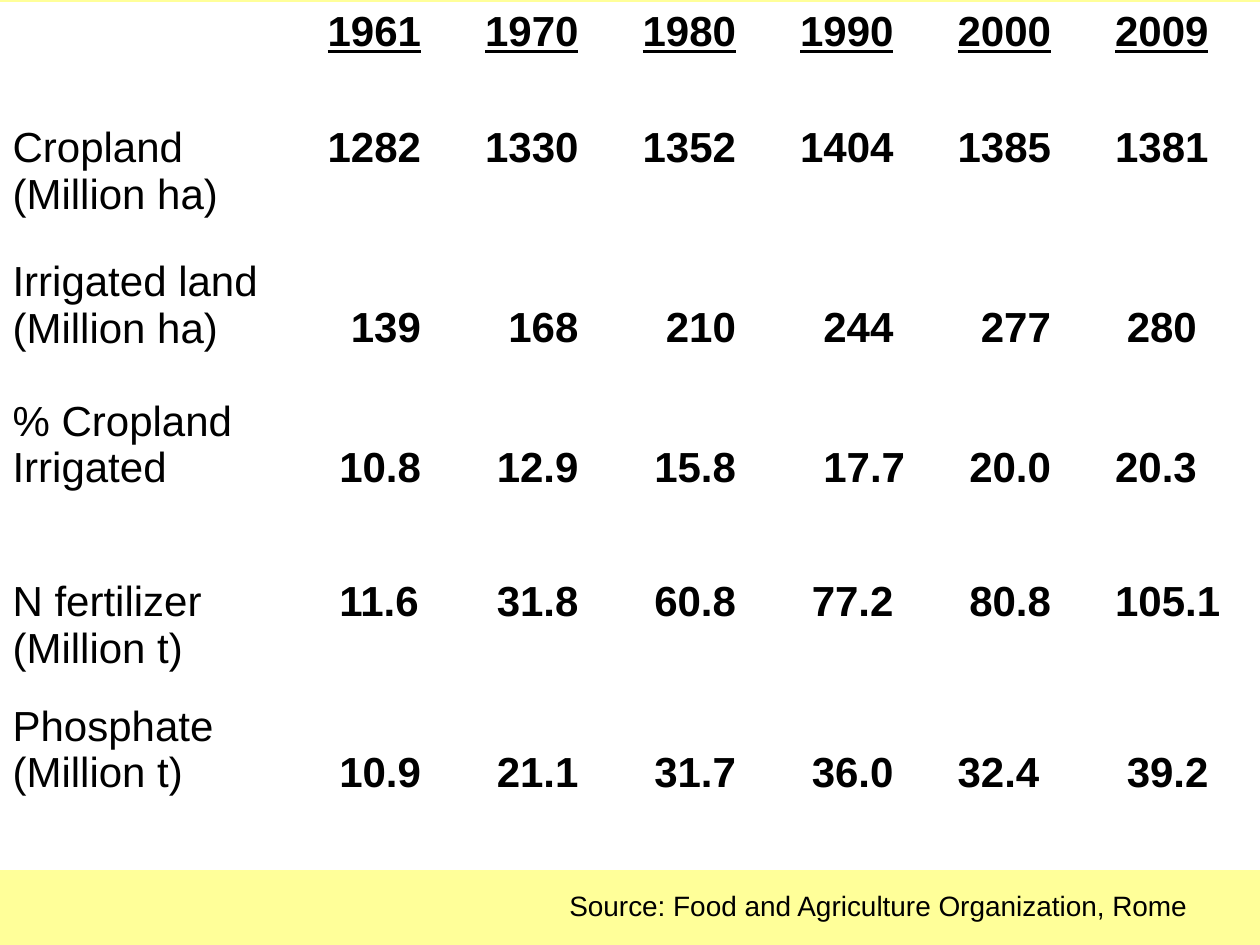
from typing import NamedTuple

from lxml.etree import SubElement
from pptx import Presentation
from pptx.dml.color import RGBColor
from pptx.oxml.ns import qn
from pptx.util import Inches, Pt

WHITE, BLACK, YELLOW = "FFFFFF", "000000", "FFFF99"
FONT = "Arial"
TABLE_SIZE = 24
LINE = 0.37  # height of one table text line, inches
SPACE = 0.278 * TABLE_SIZE / 72  # width of a space; a digit is two, a point one
MARGIN = 0.1
LABEL_WIDTH, YEAR_WIDTH = 2.5, 1.25
HEADER_HEIGHT = 0.55


class Measure(NamedTuple):
    label: str
    values: list[str]
    height: float
    label_line: int = 0  # text line of the row on which the label starts
    value_line: int = 1
    shifts: dict[int, int] = {}  # value index -> extra spaces of indent


YEARS = ["1961", "1970", "1980", "1990", "2000", "2009"]
MEASURES = [
    Measure("Cropland\n(Million ha)", ["1282", "1330", "1352", "1404", "1385", "1381"],
            1.43, label_line=1),
    Measure("Irrigated land\n(Million ha)", ["139", "168", "210", "244", "277", "280"],
            1.11, shifts={5: -1}),
    Measure("% Cropland Irrigated", ["10.8", "12.9", "15.8", "17.7", "20.0", "20.3"],
            1.43, shifts={3: 1, 5: -1}),
    Measure("N fertilizer (Million t)", ["11.6", "31.8", "60.8", "77.2", "80.8", "105.1"],
            0.99, value_line=0),
    Measure("Phosphate (Million t)", ["10.9", "21.1", "31.7", "36.0", "32.4", "39.2"],
            1.37, shifts={4: -1}),
]


def color(hex_code: str) -> RGBColor:
    return RGBColor.from_string(hex_code)


def style_text(frame, size: float, bold: bool = False, underline: bool = False) -> None:
    for paragraph in frame.paragraphs:
        font = paragraph.font
        font.name, font.size = FONT, Pt(size)
        font.bold, font.underline = bold, underline
        font.color.rgb = color(BLACK)


def set_borders(cell, bottom: float = 1, top: float = 1) -> None:
    properties = cell._tc.get_or_add_tcPr()
    widths = {"a:lnL": 1, "a:lnR": 1, "a:lnT": top, "a:lnB": bottom}
    for position, (tag, width) in enumerate(widths.items()):
        border = properties.makeelement(qn(tag), {"w": str(Pt(width))})
        fill = SubElement(border, qn("a:solidFill"))
        SubElement(fill, qn("a:srgbClr"), val=WHITE)
        properties.insert(position, border)


def fill_cell(cell, text: str, line: int = 0, indent: float = 0,
              bold: bool = False, underline: bool = False) -> None:
    cell.text = text
    cell.margin_left = Inches(MARGIN + indent)
    cell.margin_right = 0 if bold else Inches(MARGIN)
    cell.margin_top = Inches(0.05 + line * LINE)
    cell.fill.solid()
    cell.fill.fore_color.rgb = color(WHITE)
    style_text(cell.text_frame, TABLE_SIZE, bold, underline)


def number_indent(value: str, shift: int) -> float:
    """Indent that lines a number up with the end of a four-digit one."""
    spaces_wide = sum(1 if char == "." else 2 for char in value)
    return (max(0, 8 - spaces_wide) + shift) * SPACE


def add_land_table(slide) -> None:
    heights = [HEADER_HEIGHT] + [measure.height for measure in MEASURES]
    widths = [LABEL_WIDTH] + [YEAR_WIDTH] * len(YEARS)
    table = slide.shapes.add_table(
        len(heights), len(widths), 0, Inches(0.02),
        Inches(sum(widths)), Inches(sum(heights))).table
    table.first_row = table.horz_banding = False
    for column, width in zip(table.columns, widths):
        column.width = Inches(width)
    for row, height in zip(table.rows, heights):
        row.height = Inches(height)

    for column, year in enumerate([""] + YEARS):
        fill_cell(table.cell(0, column), year, bold=True, underline=True)
    for row, measure in enumerate(MEASURES, 1):
        fill_cell(table.cell(row, 0), measure.label, measure.label_line)
        for index, value in enumerate(measure.values):
            indent = number_indent(value, measure.shifts.get(index, 0))
            fill_cell(table.cell(row, index + 1), value, measure.value_line,
                      indent, bold=True)
    for row in range(len(heights)):
        for column in range(len(widths)):
            set_borders(table.cell(row, column), bottom=3 if row == 0 else 1,
                        top=3 if row == 1 else 1)


def add_source(slide) -> None:
    frame = slide.shapes.add_textbox(
        Inches(4.42), Inches(7), Inches(5.25), Inches(0.37)).text_frame
    frame.word_wrap = True
    frame.text = "Source: Food and Agriculture Organization, Rome"
    style_text(frame, 16)


def main() -> None:
    deck = Presentation()
    deck.slide_width, deck.slide_height = Inches(10), Inches(7.5)
    slide = deck.slides.add_slide(deck.slide_layouts[6])
    slide.background.fill.solid()
    slide.background.fill.fore_color.rgb = color(YELLOW)
    add_land_table(slide)
    add_source(slide)
    deck.save("out.pptx")


if __name__ == "__main__":
    main()
